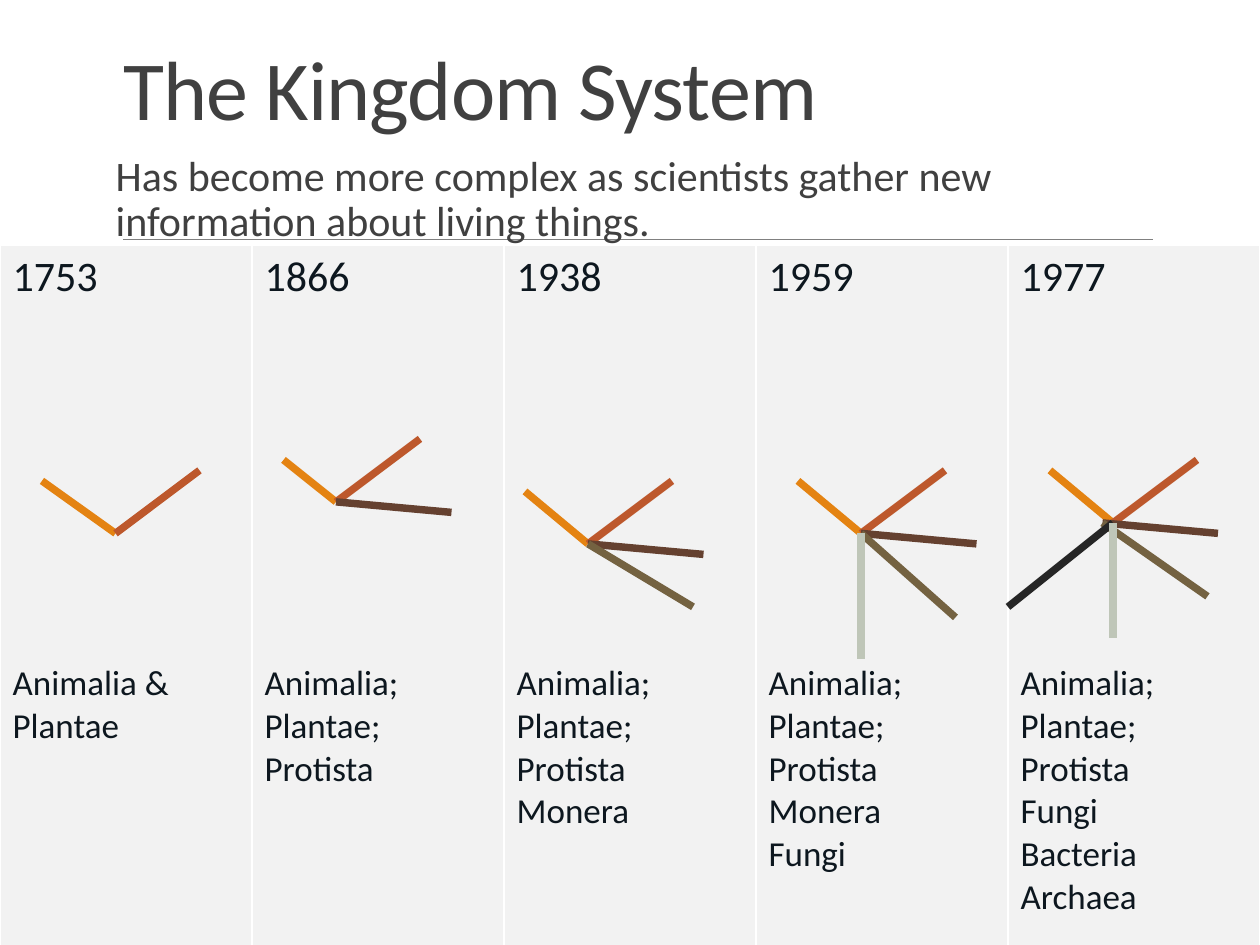
from lxml.etree import SubElement
from pptx import Presentation
from pptx.dml.color import RGBColor
from pptx.enum.shapes import MSO_CONNECTOR
from pptx.enum.text import MSO_ANCHOR
from pptx.oxml.ns import qn
from pptx.util import Pt

FONT = "Calibri"
COLORS = {
    "heading": "404040", "rule": "808080", "cell": "F2F2F2",
    "cell_text": "0D171F", "border": "FFFFFF",
    "orange": "E48312", "rust": "BD582C", "brown": "654130",
    "olive": "746241", "black": "262626", "sage": "BFC6B8",
}
KINGDOMS = {
    "1753": ["Animalia & Plantae"],
    "1866": ["Animalia; Plantae; Protista"],
    "1938": ["Animalia; Plantae; Protista", "Monera"],
    "1959": ["Animalia; Plantae; Protista", "Monera", "Fungi"],
    "1977": ["Animalia; Plantae; Protista", "Fungi", "Bacteria", "Archaea"],
}
# Points where the branches of each year meet
HUBS = {
    "1753": (66, 304.8), "1866": (192, 286.8), "1938": (336, 310.8),
    "1959": (492, 304.8), "1977": (636, 298.8),
}
# Branch tips, measured from the hub of the year
BRANCHES = {
    "orange": {"1753": (-42, -30), "1866": (-30, -24), "1938": (-36, -30),
               "1959": (-36, -30), "1977": (-36, -30)},
    "rust": {year: (48, -36) for year in HUBS},
    "brown": {"1866": (66, 6), "1938": (66, 6), "1959": (66, 6), "1977": (60, 6)},
    "olive": {"1938": (60, 36), "1959": (54, 48), "1977": (54, 42)},
    "black": {"1977": (-60, 48)},
    "sage": {"1959": (0, 72), "1977": (0, 66)},
}
START_SHIFTS = {("brown", "1977"): -6, ("olive", "1977"): -6}


def color(name):
    return RGBColor.from_string(COLORS[name])


def style(paragraph, size, color_name):
    paragraph.font.name = FONT
    paragraph.font.size = Pt(size)
    paragraph.font.color.rgb = color(color_name)


def add_text(slide, text, box, size, line_spacing, anchor=MSO_ANCHOR.TOP):
    shape = slide.shapes.add_textbox(*map(Pt, box))
    frame = shape.text_frame
    frame.word_wrap = True
    frame.vertical_anchor = anchor
    paragraph = frame.paragraphs[0]
    paragraph.text = text
    paragraph.line_spacing = line_spacing
    style(paragraph, size, "heading")
    return paragraph


def add_line(slide, start, end, color_name, width):
    line = slide.shapes.add_connector(
        MSO_CONNECTOR.STRAIGHT, *map(Pt, (*start, *end)))
    line.line.color.rgb = color(color_name)
    line.line.width = Pt(width)
    SubElement(line._element.spPr, qn("a:effectLst"))


def set_borders(cell):
    """Put the borders before the fill, as the file format demands."""
    properties = cell._tc.get_or_add_tcPr()
    for index, (side, width) in enumerate(
            [("lnL", 1), ("lnR", 1), ("lnT", 1), ("lnB", 3)]):
        border = SubElement(properties, qn(f"a:{side}"), w=str(Pt(width)))
        fill = SubElement(border, qn("a:solidFill"))
        SubElement(fill, qn("a:srgbClr"), val=COLORS["border"])
        properties.insert(index, border)


def fill_cell(cell, year, names):
    cell.fill.solid()
    cell.fill.fore_color.rgb = color("cell")
    set_borders(cell)
    frame = cell.text_frame
    frame.text = "\n".join([year, *names])
    for paragraph in frame.paragraphs:
        style(paragraph, 20, "cell_text")
    frame.paragraphs[0].font.size = Pt(24)
    frame.paragraphs[1].space_before = Pt(205)


def add_kingdom_table(slide):
    frame = slide.shapes.add_table(
        1, len(KINGDOMS), Pt(0), Pt(140.4), Pt(720), Pt(410))
    table = frame.table
    table.first_row = table.horz_banding = False
    for cell, (year, names) in zip(table.iter_cells(), KINGDOMS.items()):
        fill_cell(cell, year, names)


def add_branches(slide):
    for color_name, tips in BRANCHES.items():
        for year, (dx, dy) in tips.items():
            x, y = HUBS[year]
            start = (x + START_SHIFTS.get((color_name, year), 0), y)
            add_line(slide, start, (x + dx, y + dy), color_name, 4.25)


def main():
    presentation = Presentation()
    presentation.slide_width, presentation.slide_height = Pt(720), Pt(540)
    slide = presentation.slides.add_slide(presentation.slide_layouts[6])

    add_line(slide, (70.5, 136.8), (658.8, 136.8), "rule", 0.5)
    title = add_text(slide, "The Kingdom System", (63.4, 5, 594, 77), 48, 0.85,
                     MSO_ANCHOR.BOTTOM)
    title.runs[0]._r.get_or_add_rPr().set("spc", "-50")
    add_text(slide, "Has become more complex as scientists gather new "
             "information about living things.", (59, 85, 594, 317), 24, 0.9)
    add_kingdom_table(slide)
    add_branches(slide)
    presentation.save("out.pptx")


if __name__ == "__main__":
    main()
